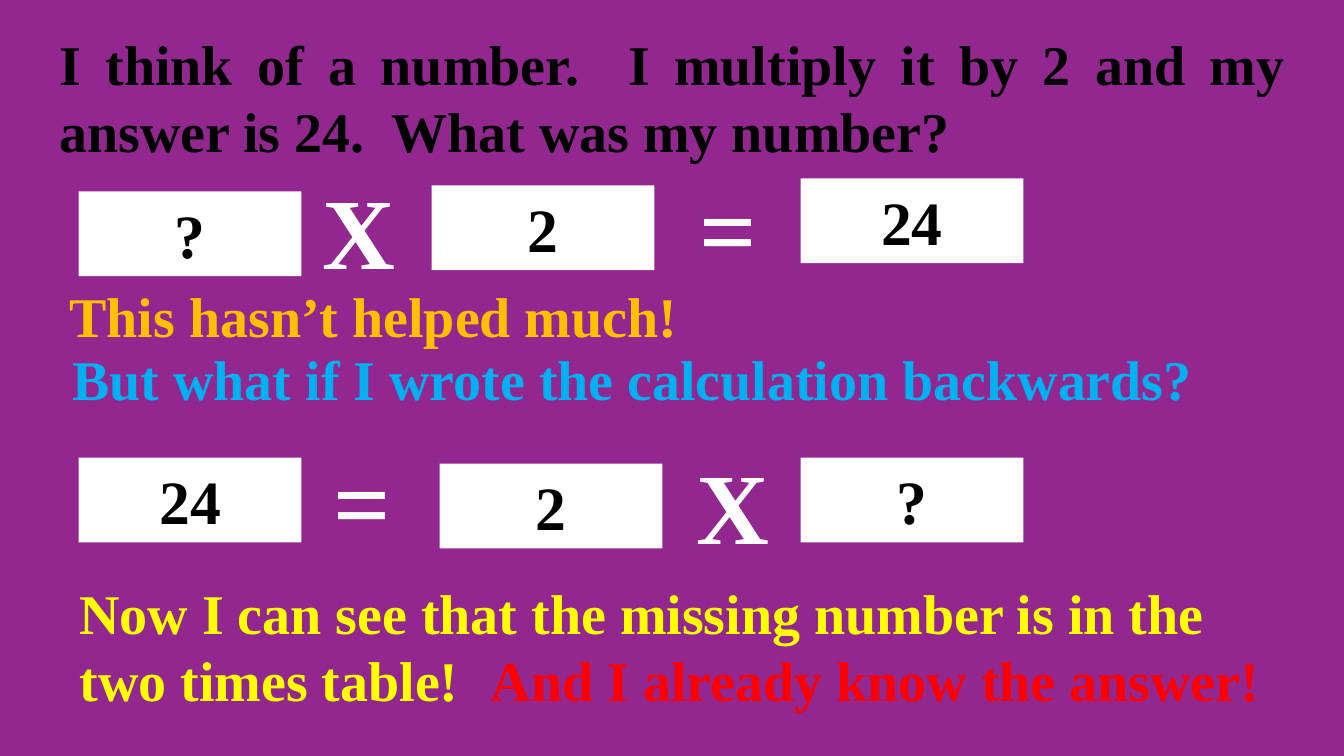
from pptx import Presentation
from pptx.dml.color import RGBColor
from pptx.enum.shapes import MSO_SHAPE
from pptx.enum.text import MSO_ANCHOR, PP_ALIGN
from pptx.util import Inches, Pt

FONT = "Times New Roman"
COLOURS = {
    "purple": "92278F",
    "black": "000000",
    "white": "FFFFFF",
    "orange": "FFC000",
    "blue": "00B0F0",
    "yellow": "FFFF00",
    "red": "FF0000",
}
CARD_WIDTH, CARD_HEIGHT = 2.21, 0.84
SIGN_HEIGHT = 1.31

SENTENCES = [
    ("I think of a number.  I multiply it by 2 and my answer is 24.  What was my number?",
     0.49, 0.24, 12.35, 1.45, "black", PP_ALIGN.JUSTIFY),
    ("This hasn’t helped much!", 0.59, 2.74, 11.31, 0.77, "orange", PP_ALIGN.LEFT),
    ("But what if I wrote the calculation backwards?",
     0.62, 3.37, 12.1, 0.77, "blue", PP_ALIGN.LEFT),
    ("Now I can see that the missing number is in the two times table!",
     0.69, 5.69, 11.77, 1.45, "yellow", PP_ALIGN.LEFT),
    ("And I already know the answer!", 4.77, 6.36, 7.94, 0.77, "red", PP_ALIGN.LEFT),
]
CARDS = [
    ("?", 0.78, 1.9), ("2", 4.28, 1.84), ("24", 7.94, 1.77),
    ("24", 0.78, 4.54), ("2", 4.36, 4.6), ("?", 7.94, 4.54),
]
SIGNS = [
    ("X", 3.08, 1.62, 0.95), ("=", 6.78, 1.59, 0.88),
    ("=", 3.15, 4.3, 0.88), ("X", 6.81, 4.35, 0.9),
]


def colour(name):
    return RGBColor.from_string(COLOURS[name])


def write(box, text, size, colour_name, alignment):
    box.text_frame.word_wrap = True
    para = box.text_frame.paragraphs[0]
    para.alignment = alignment
    span = para.add_run()
    span.text = text
    span.font.name = FONT
    span.font.size = Pt(size)
    span.font.bold = True
    span.font.color.rgb = colour(colour_name)


def add_text(page, text, left, top, width, height, size, colour_name, alignment):
    box = page.shapes.add_textbox(Inches(left), Inches(top), Inches(width), Inches(height))
    write(box, text, size, colour_name, alignment)


def add_card(page, text, left, top):
    card = page.shapes.add_shape(MSO_SHAPE.RECTANGLE, Inches(left), Inches(top),
                                 Inches(CARD_WIDTH), Inches(CARD_HEIGHT))
    card.shadow.inherit = False
    card.fill.solid()
    card.fill.fore_color.rgb = colour("white")
    card.line.fill.background()
    card.text_frame.vertical_anchor = MSO_ANCHOR.MIDDLE
    write(card, text, 44, "black", PP_ALIGN.CENTER)


def main():
    deck = Presentation()
    deck.slide_width = Inches(13.33)
    deck.slide_height = Inches(7.5)
    page = deck.slides.add_slide(deck.slide_layouts[6])
    page.background.fill.solid()
    page.background.fill.fore_color.rgb = colour("purple")

    for text, left, top, width, height, colour_name, alignment in SENTENCES:
        add_text(page, text, left, top, width, height, 40, colour_name, alignment)
    for text, left, top in CARDS:
        add_card(page, text, left, top)
    for sign, left, top, width in SIGNS:
        add_text(page, sign, left, top, width, SIGN_HEIGHT, 72, "white", PP_ALIGN.CENTER)

    deck.save("out.pptx")


if __name__ == "__main__":
    main()
